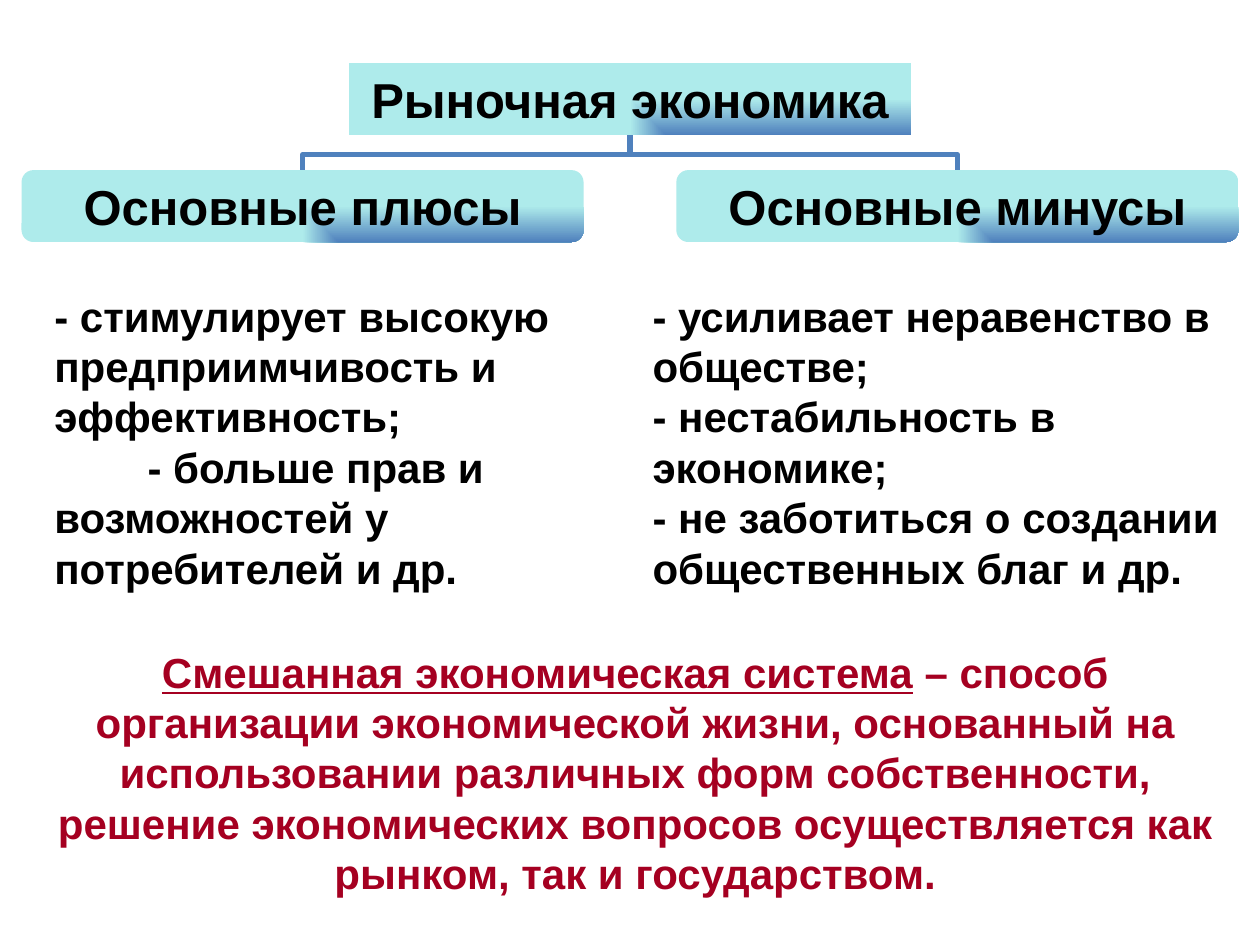
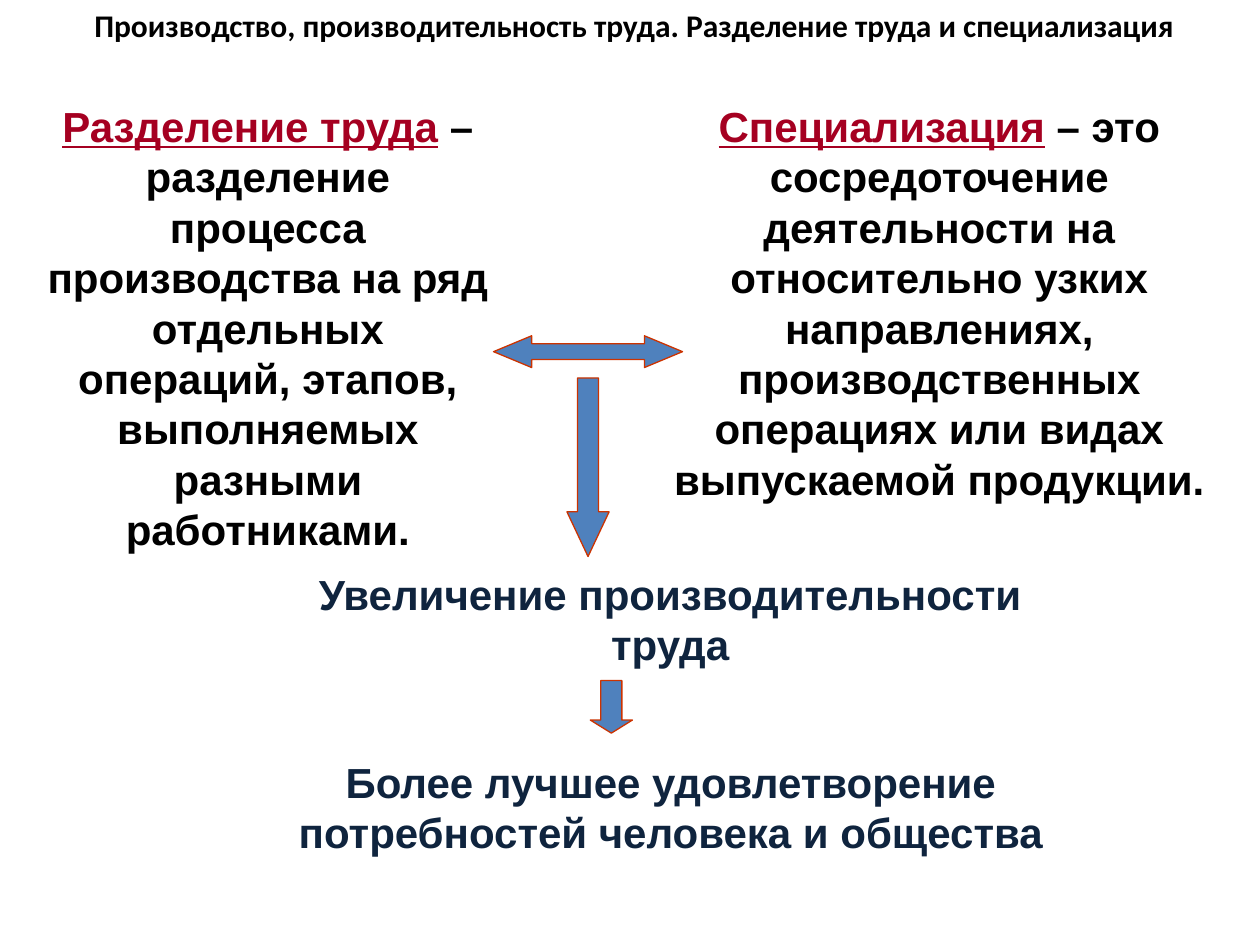
from dataclasses import dataclass

from lxml.etree import SubElement
from pptx import Presentation
from pptx.dml.color import RGBColor
from pptx.enum.shapes import MSO_CONNECTOR as Link, MSO_SHAPE as Kind
from pptx.enum.text import MSO_ANCHOR as Anchor, MSO_AUTO_SIZE as Fit, PP_ALIGN as Align
from pptx.oxml.ns import qn
from pptx.util import Cm, Pt

BLUE = RGBColor(0x4F, 0x81, 0xBD)
AQUA = RGBColor(0xAE, 0xEB, 0xEB)
CRIMSON = RGBColor(0xA5, 0x00, 0x21)
BLACK = RGBColor(0x00, 0x00, 0x00)
NAVY = RGBColor(0x0F, 0x24, 0x3E)
RUST = RGBColor(0xCC, 0x33, 0x00)
TWO_LISTS = 3  # layout with a title and two bodies


@dataclass(frozen=True)
class Box:
    """Place and size in centimetres."""
    left: float
    top: float
    width: float
    height: float

    def lengths(self) -> tuple:
        return Cm(self.left), Cm(self.top), Cm(self.width), Cm(self.height)


@dataclass(frozen=True)
class Node:
    text: str
    mid: float
    top: float

    def box(self) -> Box:
        return Box(self.mid - NODE_W / 2, self.top, NODE_W, NODE_H)


@dataclass(frozen=True)
class Arrow:
    kind: Kind
    box: Box
    head: float


NODE_W, NODE_H = 11.33, 1.45
ROOT = Node("Рыночная экономика", 12.7, 1.27)
LEAVES = (Node("Основные плюсы", 6.1, 3.43),
          Node("Основные минусы", 19.3, 3.43))
ARROWS = (Arrow(Kind.LEFT_RIGHT_ARROW, Box(9.95, 6.77, 3.81, 0.64), 1.2),
          Arrow(Kind.DOWN_ARROW, Box(11.43, 7.62, 0.85, 3.6), 1.06),
          Arrow(Kind.DOWN_ARROW, Box(11.9, 13.72, 0.85, 1.06), 0.31))
RESULTS = (
    ("Увеличение производительности труда", Box(5.89, 11.33, 15.24, 2.31)),
    ("Более лучшее удовлетворение потребностей человека и общества",
     Box(5.69, 15.12, 15.67, 2.31)),
)


def place(shape, box: Box) -> None:
    shape.left, shape.top, shape.width, shape.height = box.lengths()


def write(shape, text: str, *, term: str = "", size: int = 24, font: str = "Arial",
          color: RGBColor = BLACK, align: Align = Align.CENTER,
          anchor: Anchor = Anchor.TOP, wrap: bool = True,
          indents: tuple = ()) -> None:
    """Fill a shape with one paragraph per line, led by an underlined term."""
    frame = shape.text_frame
    frame.auto_size = Fit.NONE
    frame.word_wrap, frame.vertical_anchor = wrap, anchor
    for i, line in enumerate(text.split("\n")):
        para = frame.add_paragraph() if i else frame.paragraphs[0]
        para.alignment, para.space_before = align, Pt(0)
        props = para._p.get_or_add_pPr()
        props.set("marL", "0")
        props.set("indent", str(Cm(indents[i] if indents else 0)))
        SubElement(props, qn("a:buNone"))
        parts = [(line, color, False)]
        if term and i == 0:
            parts.insert(0, (term, CRIMSON, True))
        for part, tint, under in parts:
            run = para.add_run()
            run.text = part
            face = run.font
            face.name, face.size, face.bold = font, Pt(size), True
            face.underline, face.color.rgb = under, tint


def note(slide, box: Box, text: str, **style) -> None:
    write(slide.shapes.add_textbox(*box.lengths()), text, **style)


def shade(shape) -> None:
    """Fill from blue in the lower right corner to aqua."""
    shape.fill.gradient()
    for stop, tint in zip(shape.fill.gradient_stops, (BLUE, AQUA)):
        stop.color.rgb = tint
    grad = shape._element.spPr.find(qn("a:gradFill"))
    grad.remove(grad.find(qn("a:lin")))
    rect = SubElement(grad, qn("a:path"), path="rect")
    SubElement(rect, qn("a:fillToRect"), l="100000", t="100000")


def draw_node(shape, node: Node) -> None:
    shade(shape)
    shape.line.fill.background()
    frame = shape.text_frame
    frame.margin_left = frame.margin_right = 0
    frame.margin_top = frame.margin_bottom = 0
    write(shape, node.text, size=28, anchor=Anchor.MIDDLE, wrap=False)


def join(slide, leaf: Node, root: Node) -> None:
    """Bent line from the top of a leaf up to the foot of the root."""
    foot = root.top + NODE_H
    gap, span = leaf.top - foot, abs(leaf.mid - root.mid)
    mid_x, mid_y = (leaf.mid + root.mid) / 2, (leaf.top + foot) / 2
    right = leaf.mid > root.mid
    side = gap / 2 if right else -gap / 2
    link = slide.shapes.add_connector(
        Link.ELBOW, Cm(mid_x + side), Cm(mid_y - span / 2),
        Cm(mid_x - side), Cm(mid_y + span / 2))
    link.line.color.rgb, link.line.width = BLUE, Pt(3)
    props = link._element.spPr
    props.find(qn("a:xfrm")).set("rot", str((90 if right else 270) * 60000))
    guides = props.find(qn("a:prstGeom")).find(qn("a:avLst"))
    SubElement(guides, qn("a:gd"), name="adj1", fmla="val 43900")
    SubElement(props, qn("a:effectLst"))


def draw_arrow(slide, arrow: Arrow) -> None:
    shape = slide.shapes.add_shape(arrow.kind, *arrow.box.lengths())
    shape.shadow.inherit = False
    shape.adjustments[0], shape.adjustments[1] = 0.5, arrow.head
    shape.fill.solid()
    shape.fill.fore_color.rgb = BLUE
    shape.line.color.rgb, shape.line.width = RUST, Pt(0.75)


def add_market(deck) -> None:
    slide = deck.slides.add_slide(deck.slide_layouts[TWO_LISTS])
    title, pros, cons = slide.placeholders
    place(title, ROOT.box())
    form = SubElement(title._element.spPr, qn("a:prstGeom"), prst="roundRect")
    SubElement(form, qn("a:avLst"))
    draw_node(title, ROOT)
    for leaf in LEAVES:
        join(slide, leaf, ROOT)
        shape = slide.shapes.add_shape(Kind.ROUNDED_RECTANGLE, *leaf.box().lengths())
        shape.shadow.inherit = False
        draw_node(shape, leaf)

    place(pros, Box(0.84, 5.72, 11.23, 6.35))
    write(pros, "- стимулирует высокую предприимчивость и эффективность;\n"
                "- больше прав и возможностей у потребителей и др.",
          align=Align.LEFT, indents=(0, 1.88))
    place(cons, Box(12.9, 5.72, 12.07, 6.35))
    write(cons, "- усиливает неравенство в обществе;\n"
                "- нестабильность в экономике;\n"
                "- не заботиться о создании общественных благ и др.",
          align=Align.LEFT)
    note(slide, Box(0.64, 12.9, 24.33, 5.33),
         " – способ организации экономической жизни, основанный на использовании "
         "различных форм собственности, решение экономических вопросов "
         "осуществляется как рынком, так и государством.",
         term="Смешанная экономическая система", color=CRIMSON)


def add_labour(deck) -> None:
    slide = deck.slides.add_slide(deck.slide_layouts[TWO_LISTS])
    title, split, focus = slide.placeholders
    place(title, Box(0, 0, 25.58, 1.78))
    write(title, "Производство, производительность труда. "
                 "Разделение труда и специализация", size=18, font="Calibri")
    place(split, Box(0.64, 1.9, 9.52, 9.37))
    write(split, " – разделение процесса производства на ряд отдельных операций, "
                 "этапов, выполняемых разными работниками.",
          term="Разделение труда")
    place(focus, Box(12.9, 1.9, 12.07, 8.38))
    write(focus, " – это сосредоточение деятельности на относительно узких "
                 "направлениях, производственных операциях или видах "
                 "выпускаемой продукции.", term="Специализация")
    for arrow in ARROWS:
        draw_arrow(slide, arrow)
    for text, box in RESULTS:
        note(slide, box, text, color=NAVY)


def main() -> None:
    deck = Presentation()
    deck.slide_width, deck.slide_height = Cm(25.4), Cm(19.05)
    add_market(deck)
    add_labour(deck)
    deck.save("out.pptx")


if __name__ == "__main__":
    main()
